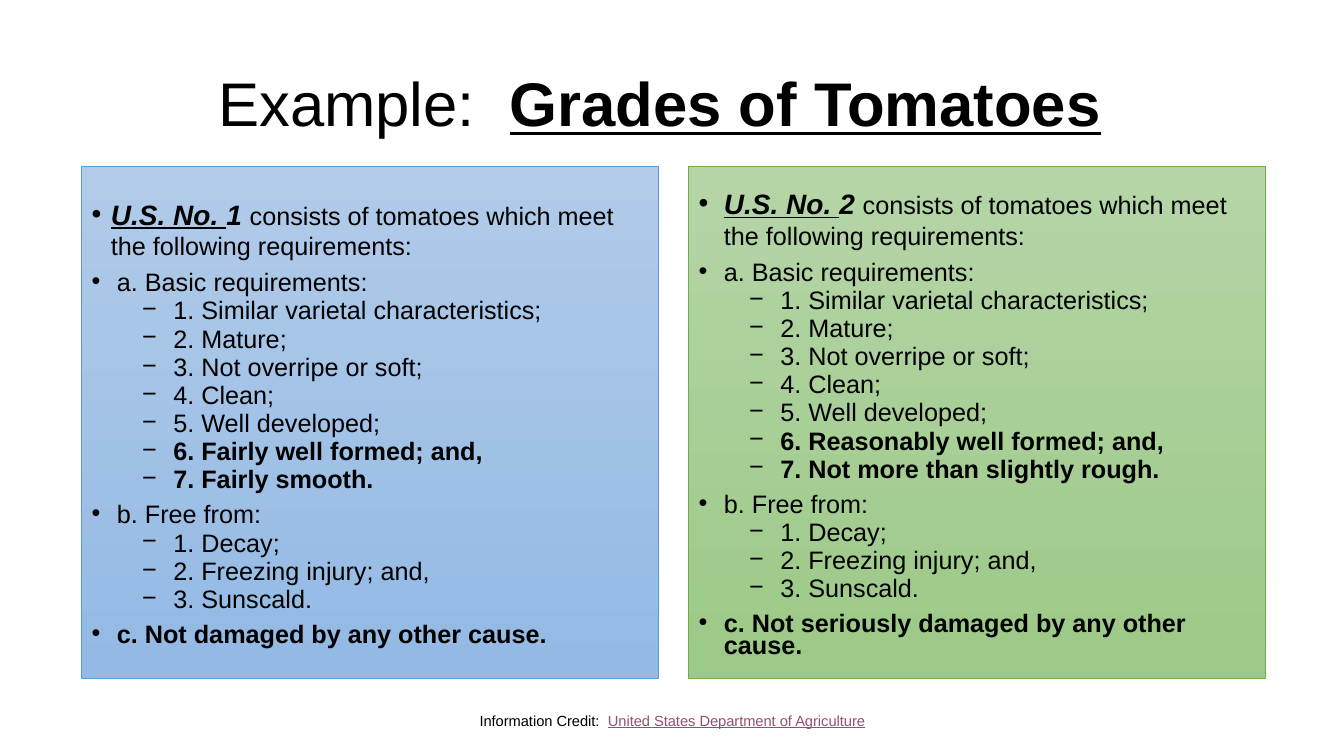
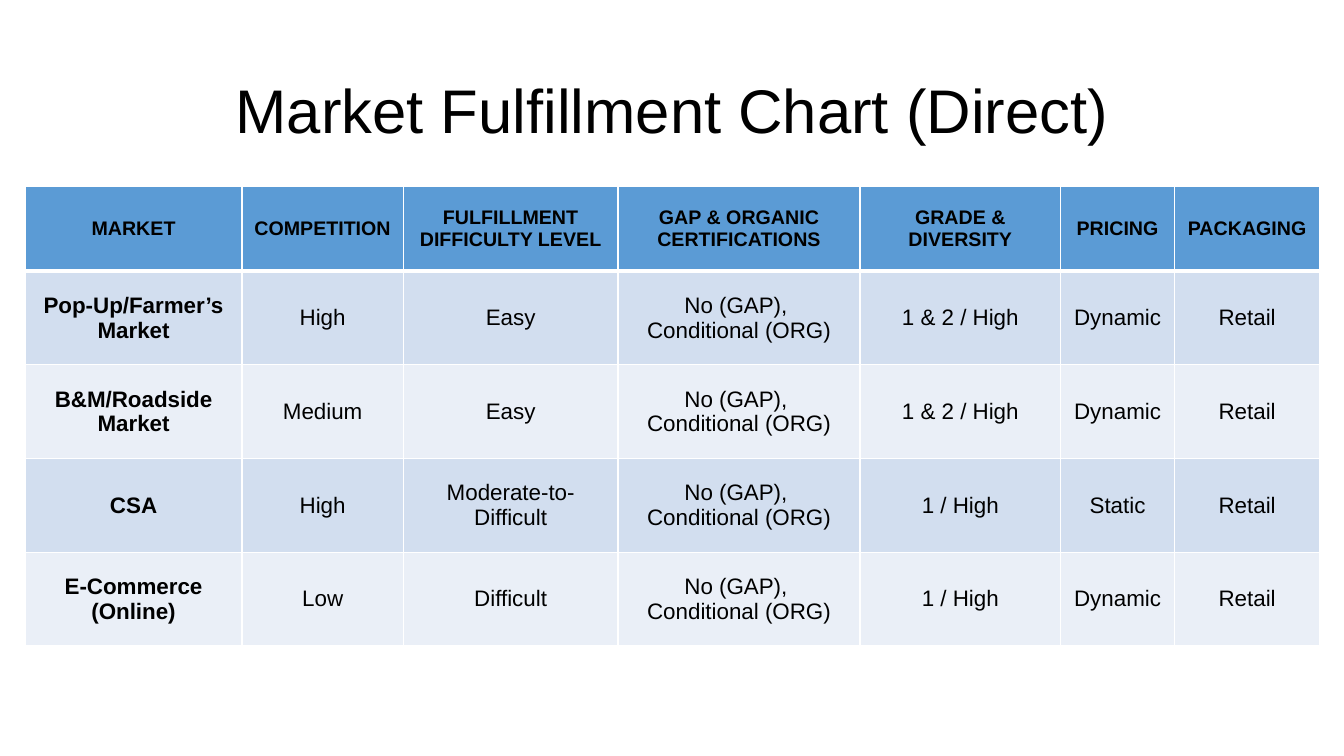
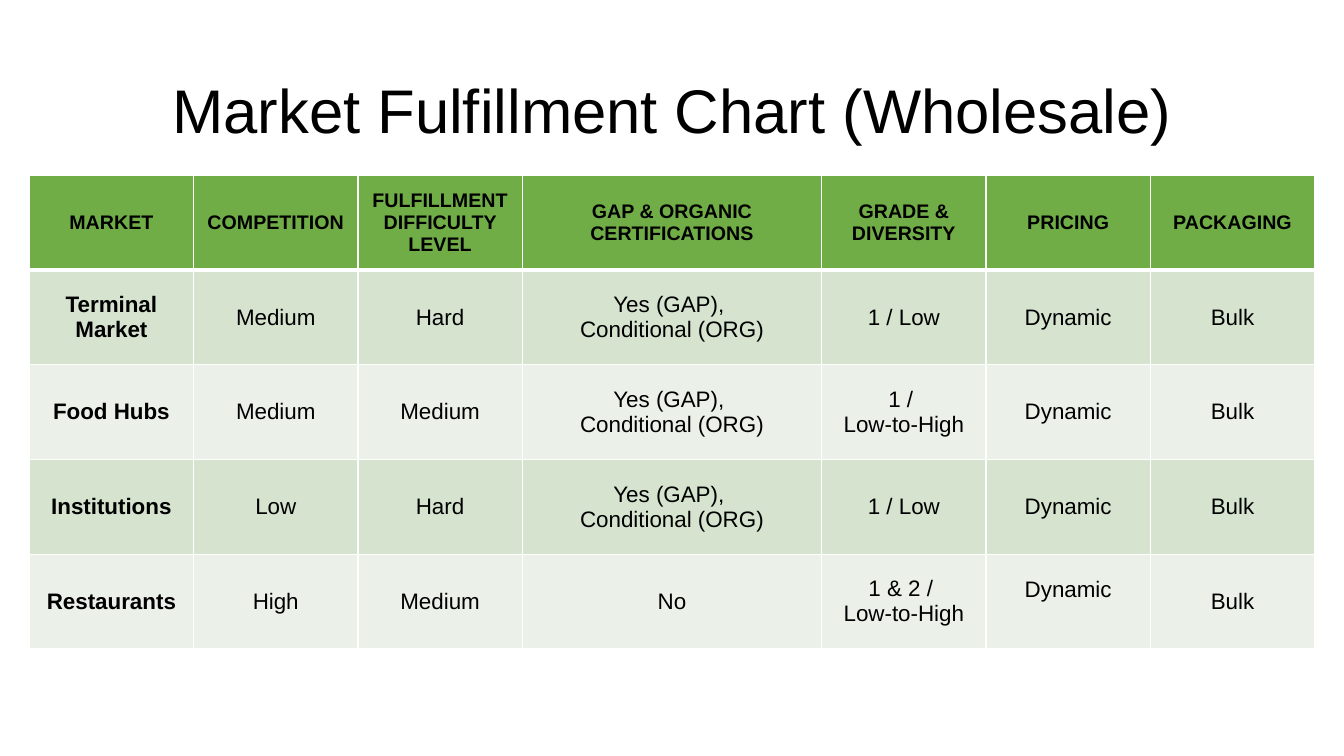
"""Builds three slides on tomato grades and market fulfillment."""
from lxml import etree
from pptx import Presentation
from pptx.dml.color import RGBColor
from pptx.enum import text as te
from pptx.oxml import ns
from pptx.util import Pt

PX = 9144
FONT = "Arial"
BLACK = RGBColor(0x00, 0x00, 0x00)
WHITE = RGBColor(0xFF, 0xFF, 0xFF)
LINK = RGBColor(0x95, 0x4F, 0x72)
BLUE = RGBColor(0x5B, 0x9B, 0xD5)
BLUE_TOP = RGBColor(0xB1, 0xCB, 0xE9)
BLUE_END = RGBColor(0x93, 0xB9, 0xE4)
BLUE_BANDS = RGBColor(0xD2, 0xDE, 0xEF), RGBColor(0xEA, 0xEF, 0xF7)
GREEN = RGBColor(0x70, 0xAD, 0x47)
GREEN_TOP = RGBColor(0xB5, 0xD5, 0xA7)
GREEN_END = RGBColor(0x9C, 0xC9, 0x87)
GREEN_BANDS = RGBColor(0xD5, 0xE3, 0xCF), RGBColor(0xEB, 0xF1, 0xE9)

GRADES = [
    dict(number="1 ", left=81, indent=19, line=BLUE, stops=(BLUE_TOP, BLUE_END),
         own=["6. Fairly well formed; and,", "7. Fairly smooth."],
         last="c. Not damaged by any other cause."),
    dict(number="2 ", left=683, indent=25, line=GREEN, stops=(GREEN_TOP, GREEN_END),
         own=["6. Reasonably well formed; and,", "7. Not more than slightly rough."],
         last="c. Not seriously damaged by any other cause."),
]
BASIC = ["1. Similar varietal characteristics;", "2. Mature;", "3. Not overripe or soft;",
         "4. Clean;", "5. Well developed;"]
FREE_FROM = ["1. Decay;", "2. Freezing injury; and,", "3. Sunscald."]

HEADER = ["MARKET", "COMPETITION", "FULFILLMENT DIFFICULTY LEVEL",
          "GAP & ORGANIC CERTIFICATIONS", "GRADE & DIVERSITY", "PRICING", "PACKAGING"]
NO_GAP = "No (GAP), \nConditional (ORG)"
YES_GAP = "Yes (GAP), \nConditional (ORG)"
CHARTS = [
    dict(title="Market Fulfillment Chart (Direct)", at=(25, 185), head=BLUE, bands=BLUE_BANDS,
         cols=[215, 160, 213, 240, 199, 113, 144], heights=[84] + [93] * 4, raised={},
         rows=[
             ["Pop-Up/Farmer’s Market", "High", "Easy", NO_GAP, "1 & 2 / High", "Dynamic", "Retail"],
             ["B&M/Roadside Market", "Medium", "Easy", NO_GAP, "1 & 2 / High", "Dynamic", "Retail"],
             ["CSA", "High", "Moderate-to-Difficult", NO_GAP, "1 / High", "Static", "Retail"],
             ["E-Commerce (Online)", "Low", "Difficult", NO_GAP, "1 / High", "Dynamic", "Retail"],
         ]),
    dict(title="Market Fulfillment Chart (Wholesale)", at=(29, 174), head=GREEN, bands=GREEN_BANDS,
         cols=[163, 163, 163, 297, 163, 163, 163], heights=[94] * 5, raised={(4, 5): 29},
         rows=[
             ["Terminal Market", "Medium", "Hard", YES_GAP, "1 / Low", "Dynamic", "Bulk"],
             ["Food Hubs", "Medium", "Medium", YES_GAP, "1 / \nLow-to-High", "Dynamic", "Bulk"],
             ["Institutions", "Low", "Hard", YES_GAP, "1 / Low", "Dynamic", "Bulk"],
             ["Restaurants", "High", "Medium", "No", "1 & 2 / \nLow-to-High", "Dynamic", "Bulk"],
         ]),
]


def add_run(p, text, size=18, color=BLACK, bold=False, italic=False, underline=False):
    r = p.add_run()
    r.text = text
    f = r.font
    f.name, f.size, f.bold, f.italic, f.underline = FONT, Pt(size), bold, italic, underline
    f.color.rgb = color


def place(s, left, top, width, height):
    s.left, s.top, s.width, s.height = (v * PX for v in (left, top, width, height))


def set_title(slide, at, *runs):
    s = slide.shapes.title
    place(s, *at)
    tf = s.text_frame
    tf.word_wrap, tf.auto_size = True, te.MSO_AUTO_SIZE.NONE
    tf.vertical_anchor = te.MSO_ANCHOR.MIDDLE
    p = tf.paragraphs[0]
    p.alignment, p.line_spacing = te.PP_ALIGN.CENTER, 0.9
    for text, style in runs:
        add_run(p, text, size=44, **style)


def set_bullet(p, char, margin, hang, before, spacing=0.7):
    p.space_before, p.space_after, p.line_spacing = Pt(before), Pt(0), spacing
    pPr = p._p.get_or_add_pPr()
    pPr.set("marL", str(margin * PX))
    pPr.set("indent", str(-hang * PX))
    etree.SubElement(pPr, ns.qn("a:buFont")).set("typeface", FONT)
    etree.SubElement(pPr, ns.qn("a:buChar")).set("char", char)


def fill_grade(s, grade):
    place(s, grade["left"], 165, 572, 508)
    s.fill.gradient()
    s.fill.gradient_angle = 270
    for stop, color in zip(s.fill.gradient_stops, grade["stops"]):
        stop.color.rgb = color
    s.line.color.rgb, s.line.width = grade["line"], Pt(0.5)
    tf = s.text_frame
    tf.word_wrap, tf.auto_size = True, te.MSO_AUTO_SIZE.NONE
    tf.vertical_anchor = te.MSO_ANCHOR.MIDDLE
    p = tf.paragraphs[0]
    set_bullet(p, "•", grade["indent"], grade["indent"], 0, 1.0)
    add_run(p, "U.S. No. ", size=20, bold=True, italic=True, underline=True)
    add_run(p, grade["number"], size=20, bold=True, italic=True)
    add_run(p, "consists of tomatoes which meet the following requirements:")
    items = [(0, "a. Basic requirements:", False)]
    items += [(1, text, False) for text in BASIC]
    items += [(1, text, True) for text in grade["own"]]
    items += [(0, "b. Free from:", False)]
    items += [(1, text, False) for text in FREE_FROM]
    items += [(0, grade["last"], True)]
    for level, text, bold in items:
        p = tf.add_paragraph()
        p.level = level
        set_bullet(p, *(("−", 81, 31, 5) if level else ("•", 25, 25, 10)))
        add_run(p, text, bold=bold)


def set_borders(cell, **widths):
    tcPr = cell._tc.get_or_add_tcPr()
    for side, width in widths.items():
        ln = etree.SubElement(tcPr, ns.qn("a:ln" + side), w=str(Pt(width)))
        fill = etree.SubElement(ln, ns.qn("a:solidFill"))
        etree.SubElement(fill, ns.qn("a:srgbClr"), val=str(WHITE))


def add_grades_slide(prs):
    slide = prs.slides.add_slide(prs.slide_layouts[3])
    set_title(slide, (81, 47, 1147, 118), ("Example:  ", {}),
              ("Grades of Tomatoes", dict(bold=True, underline=True)))
    for idx, grade in enumerate(GRADES, 1):
        fill_grade(slide.placeholders[idx], grade)
    s = slide.shapes.add_textbox(*(v * PX for v in (205, 701, 924, 28)))
    s.text_frame.word_wrap = True
    p = s.text_frame.paragraphs[0]
    p.alignment = te.PP_ALIGN.CENTER
    add_run(p, "Information Credit:  ", size=10.5)
    add_run(p, "United States Department of Agriculture", size=10.5, color=LINK, underline=True)


def add_chart_slide(prs, chart):
    slide = prs.slides.add_slide(prs.slide_layouts[5])
    set_title(slide, (92, 40, 1150, 145), (chart["title"], {}))
    cols, heights = chart["cols"], chart["heights"]
    rows = [HEADER] + chart["rows"]
    box = (*chart["at"], sum(cols), sum(heights))
    table = slide.shapes.add_table(len(rows), len(cols), *(v * PX for v in box)).table
    for col, width in zip(table.columns, cols):
        col.width = width * PX
    for i, (row, height) in enumerate(zip(rows, heights)):
        table.rows[i].height = height * PX
        for j, text in enumerate(row):
            cell = table.cell(i, j)
            set_borders(cell, L=1, R=1, T=3 if i == 1 else 1, B=1 if i else 3)
            cell.fill.solid()
            cell.fill.fore_color.rgb = chart["bands"][(i - 1) % 2] if i else chart["head"]
            cell.vertical_anchor = te.MSO_ANCHOR.MIDDLE
            cell.margin_bottom = chart["raised"].get((i, j), 5) * PX
            tf = cell.text_frame
            for k, line in enumerate(text.split("\n")):
                p = tf.add_paragraph() if k else tf.paragraphs[0]
                p.alignment = te.PP_ALIGN.CENTER
                add_run(p, line, size=16 if i else 14, bold=i == 0 or j == 0)


def main():
    prs = Presentation()
    prs.slide_width, prs.slide_height = 1333 * PX, 750 * PX
    add_grades_slide(prs)
    for chart in CHARTS:
        add_chart_slide(prs, chart)
    prs.save("out.pptx")


if __name__ == "__main__":
    main()
